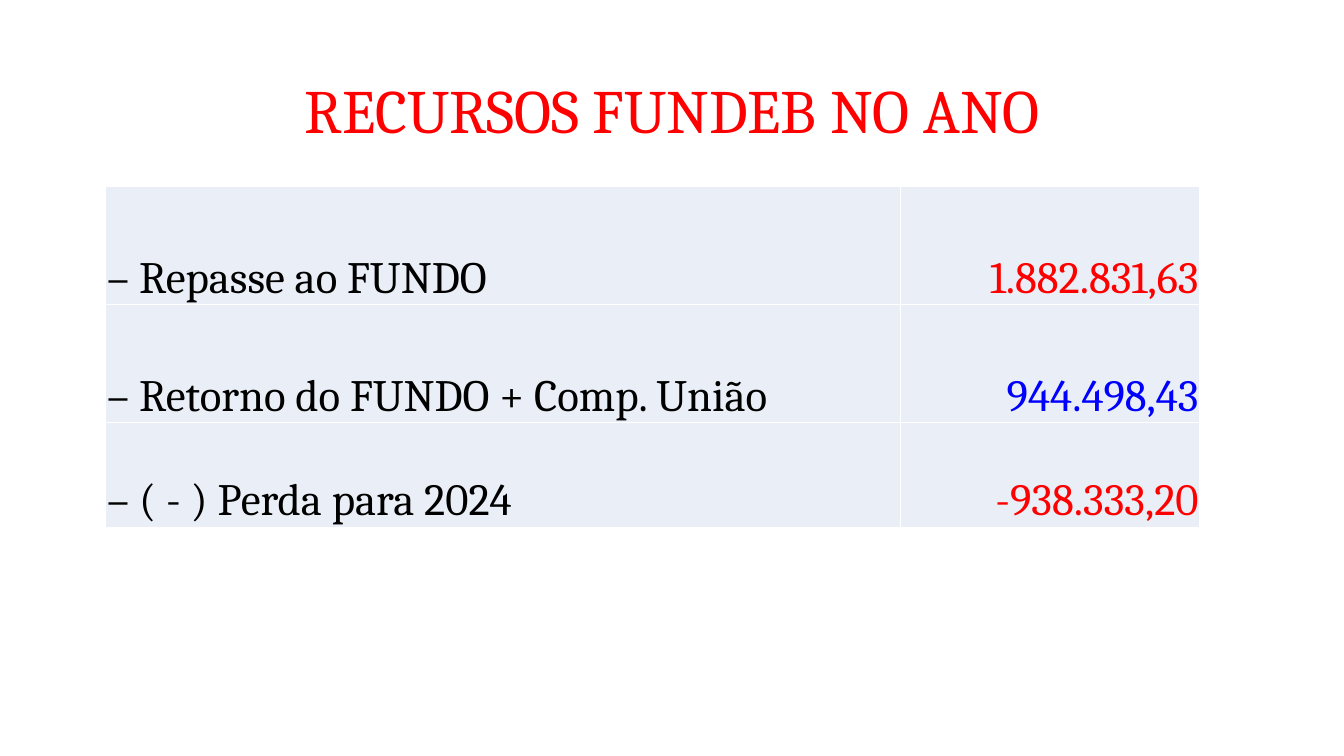
from lxml import etree
from pptx import Presentation
from pptx.dml.color import RGBColor
from pptx.enum.text import MSO_ANCHOR, PP_ALIGN
from pptx.oxml.ns import qn
from pptx.util import Pt

PX = 9144  # EMU per px, 100 px to the inch
FONT = "Cambria"
RED = RGBColor(0xFF, 0x00, 0x00)
BLUE = RGBColor(0x00, 0x00, 0xFF)
BLACK = RGBColor(0x00, 0x00, 0x00)
PALE = RGBColor(0xEA, 0xEF, 0xF7)
WHITE = RGBColor(0xFF, 0xFF, 0xFF)
LEFT, MID, RIGHT = PP_ALIGN.LEFT, PP_ALIGN.CENTER, PP_ALIGN.RIGHT
MIDDLE, BOTTOM = MSO_ANCHOR.MIDDLE, MSO_ANCHOR.BOTTOM

COLS = (788, 297)
ROWS = (
    (117, "– Repasse ao FUNDO", "1.882.831,63", RED),
    (117, "– Retorno do FUNDO + Comp. União", "944.498,43", BLUE),
    (104, "– ( - ) Perda para 2024", "-938.333,20", RED),
)


def px(*vals):
    return [val * PX for val in vals]


def write(frame, text, size, color, align):
    para = frame.paragraphs[0]
    para.text = text
    para.alignment = align
    font = para.runs[0].font
    font.name, font.size = FONT, Pt(size)
    font.color.rgb = color
    return para


def add_title(slide, text):
    box = slide.shapes.add_textbox(*px(92, 40, 1150, 145))
    frame = box.text_frame
    frame.word_wrap = True
    frame.vertical_anchor = MIDDLE
    write(frame, text, 44, RED, MID).line_spacing = 0.9


def add_edges(cell):
    """Draw a thin white line on each side of the cell."""
    props = cell._tc.get_or_add_tcPr()
    for side in ("lnL", "lnR", "lnT", "lnB"):
        line = etree.SubElement(props, qn("a:" + side), w=str(Pt(1)))
        fill = etree.SubElement(line, qn("a:solidFill"))
        etree.SubElement(fill, qn("a:srgbClr"), val=str(WHITE))


def fill_cell(cell, text, color, align):
    add_edges(cell)
    cell.fill.solid()
    cell.fill.fore_color.rgb = PALE
    cell.vertical_anchor = BOTTOM
    cell.margin_left = cell.margin_right = cell.margin_top = PX
    cell.margin_bottom = 0
    write(cell.text_frame, text, 32, color, align)


def add_grid(slide):
    high = sum(row[0] for row in ROWS)
    place = px(105, 185, sum(COLS), high)
    table = slide.shapes.add_table(len(ROWS), len(COLS), *place).table
    table.first_row = table.horz_banding = False
    for col, wide in zip(table.columns, COLS):
        col.width = wide * PX
    for i, (tall, label, value, color) in enumerate(ROWS):
        table.rows[i].height = tall * PX
        fill_cell(table.cell(i, 0), label, BLACK, LEFT)
        fill_cell(table.cell(i, 1), value, color, RIGHT)


def main():
    deck = Presentation()
    deck.slide_width, deck.slide_height = px(1333, 750)
    slide = deck.slides.add_slide(deck.slide_layouts[6])
    add_title(slide, "RECURSOS FUNDEB NO ANO")
    add_grid(slide)
    deck.save("out.pptx")


if __name__ == "__main__":
    main()
